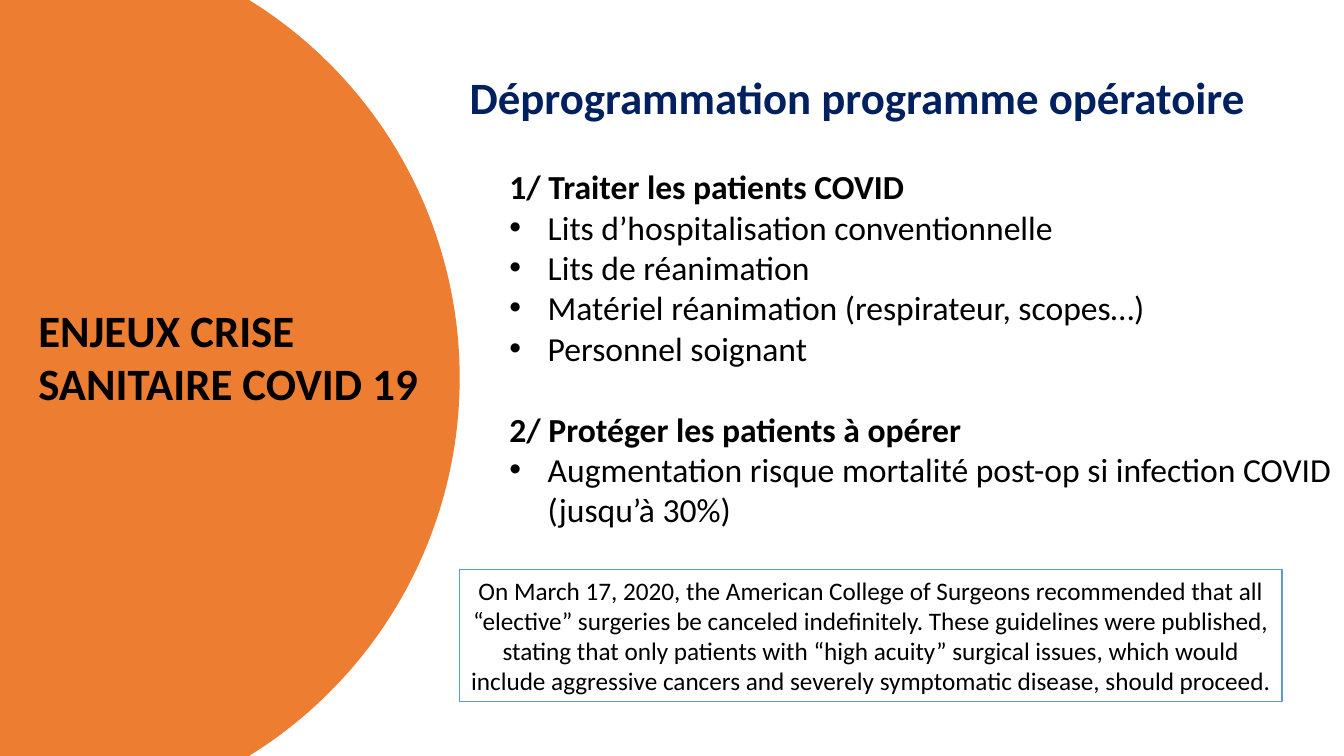
import math

import lxml.etree
import pptx
import pptx.dml.color
import pptx.enum.shapes
import pptx.enum.text
import pptx.oxml.ns
import pptx.util

ORANGE = pptx.dml.color.RGBColor(0xED, 0x7D, 0x31)
NAVY = pptx.dml.color.RGBColor(0x00, 0x20, 0x60)
BLUE = pptx.dml.color.RGBColor(0x5B, 0x9B, 0xD5)
BLACK = pptx.dml.color.RGBColor(0x00, 0x00, 0x00)
WHITE = pptx.dml.color.RGBColor(0xFF, 0xFF, 0xFF)

LEFT = pptx.enum.text.PP_ALIGN.LEFT
CENTER = pptx.enum.text.PP_ALIGN.CENTER
TOP = pptx.enum.text.MSO_ANCHOR.TOP
MIDDLE = pptx.enum.text.MSO_ANCHOR.MIDDLE

SECTIONS = [
    ("1/ Traiter les patients COVID", [
        "Lits d’hospitalisation conventionnelle",
        "Lits de réanimation",
        "Matériel réanimation (respirateur, scopes…)",
        "Personnel soignant",
    ]),
    ("2/ Protéger les patients à opérer", [
        "Augmentation risque mortalité post-op si infection COVID (jusqu’à 30%)",
    ]),
]
GUIDELINE = (
    "On March 17, 2020, the American College of Surgeons recommended that all "
    "“elective” surgeries be canceled indefinitely. These guidelines were published, "
    "stating that only patients with “high acuity” surgical issues, which would "
    "include aggressive cancers and severely symptomatic disease, should proceed."
)


class SlideBuilder:
    """Places styled elements on one slide, with boxes in percent of its size."""

    font_name = "Calibri"
    title_size, list_size, note_size = 32, 24, 18

    def __init__(self, presentation):
        self.width = presentation.slide_width
        self.height = presentation.slide_height
        self.slide = presentation.slides.add_slide(presentation.slide_layouts[1])

    def box(self, left, top, width, height):
        return (int(self.width * left / 100), int(self.height * top / 100),
                int(self.width * width / 100), int(self.height * height / 100))

    def move(self, shape, box):
        shape.left, shape.top, shape.width, shape.height = self.box(*box)

    def frame(self, shape, anchor=TOP):
        text_frame = shape.text_frame
        text_frame.word_wrap = True
        text_frame.auto_size = pptx.enum.text.MSO_AUTO_SIZE.NONE
        text_frame.vertical_anchor = anchor
        return text_frame

    def add_text(self, paragraph, text, size, color=BLACK, bold=False, alignment=LEFT):
        paragraph.alignment = alignment
        run = paragraph.add_run()
        run.text = text
        run.font.name = self.font_name
        run.font.size = pptx.util.Pt(size)
        run.font.bold = bold
        run.font.color.rgb = color

    def indent(self, paragraph, margin, hanging=0.0, bullet=None):
        properties = paragraph._p.get_or_add_pPr()
        properties.set("marL", str(pptx.util.Inches(margin)))
        properties.set("indent", str(pptx.util.Inches(-hanging)))
        if bullet:
            font = lxml.etree.SubElement(properties, pptx.oxml.ns.qn("a:buFont"))
            font.set("typeface", "Arial")
            mark = lxml.etree.SubElement(properties, pptx.oxml.ns.qn("a:buChar"))
            mark.set("char", bullet)
        else:
            lxml.etree.SubElement(properties, pptx.oxml.ns.qn("a:buNone"))

    def disc(self, center_x, radius, color, steps=120):
        center_y = self.height / 2
        limit = math.asin(center_y / radius)
        angles = [limit * (2 * step / steps - 1) for step in range(steps + 1)]
        points = [(center_x + radius * math.cos(angle), center_y + radius * math.sin(angle))
                  for angle in angles]
        builder = self.slide.shapes.build_freeform(0, 0)
        builder.add_line_segments(points + [(0, self.height)], close=True)
        shape = builder.convert_to_shape()
        shape.shadow.inherit = False
        shape.fill.solid()
        shape.fill.fore_color.rgb = color
        shape.line.fill.background()
        self.slide.shapes.title.element.addprevious(shape.element)

    def title(self, text, box):
        shape = self.slide.shapes.title
        self.move(shape, box)
        paragraph = self.frame(shape).paragraphs[0]
        self.add_text(paragraph, text, self.title_size, bold=True)

    def heading(self, text, box):
        shape = self.slide.shapes.add_textbox(*self.box(*box))
        paragraph = self.frame(shape).paragraphs[0]
        self.add_text(paragraph, text, self.title_size, NAVY, bold=True)

    def sections(self, sections, box, gap):
        shape = self.slide.placeholders[1]
        self.move(shape, box)
        text_frame = self.frame(shape)
        for index, (heading, items) in enumerate(sections):
            paragraph = text_frame.add_paragraph() if index else text_frame.paragraphs[0]
            self.indent(paragraph, 0.5)
            paragraph.space_before = pptx.util.Pt(gap if index else 0)
            self.add_text(paragraph, heading, self.list_size, bold=True)
            for item in items:
                paragraph = text_frame.add_paragraph()
                self.indent(paragraph, 0.88, 0.38, "•")
                paragraph.space_before = pptx.util.Pt(0)
                self.add_text(paragraph, item, self.list_size)

    def note(self, text, box):
        rectangle = pptx.enum.shapes.MSO_SHAPE.RECTANGLE
        shape = self.slide.shapes.add_shape(rectangle, *self.box(*box))
        shape.shadow.inherit = False
        shape.fill.solid()
        shape.fill.fore_color.rgb = WHITE
        shape.line.color.rgb = BLUE
        shape.line.width = pptx.util.Pt(1)
        paragraph = self.frame(shape, MIDDLE).paragraphs[0]
        self.add_text(paragraph, text, self.note_size, alignment=CENTER)


def main():
    presentation = pptx.Presentation()
    presentation.slide_width = pptx.util.Inches(13.33)
    presentation.slide_height = pptx.util.Inches(7.5)
    builder = SlideBuilder(presentation)
    builder.disc(pptx.util.Inches(0.15), pptx.util.Inches(4.41), ORANGE)
    builder.title("ENJEUX CRISE SANITAIRE COVID 19", (2.1, 39.33, 30, 15.73))
    builder.heading("Déprogrammation programme opératoire", (34.2, 8.53, 63.3, 8.53))
    builder.sections(SECTIONS, (33.4, 21.33, 66.6, 49.87), gap=29)
    builder.note(GUIDELINE, (34.2, 75.33, 61.2, 17.47))
    presentation.save("out.pptx")


if __name__ == "__main__":
    main()
